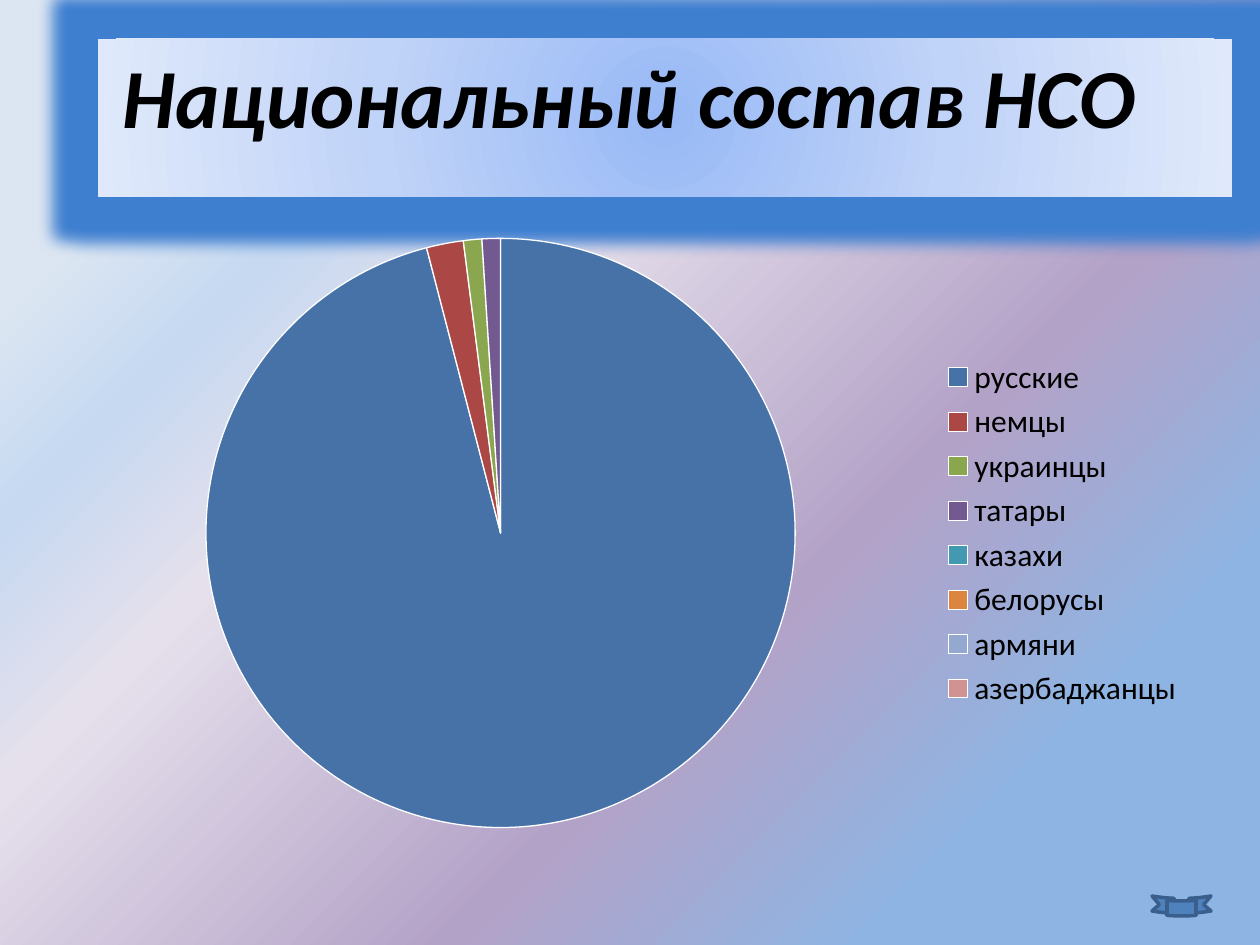
from lxml import etree
from pptx import Presentation
from pptx.chart.data import CategoryChartData
from pptx.dml.color import RGBColor
from pptx.enum.chart import XL_CHART_TYPE, XL_LEGEND_POSITION
from pptx.enum.shapes import MSO_SHAPE
from pptx.enum.text import MSO_ANCHOR, PP_ALIGN
from pptx.oxml import parse_xml
from pptx.oxml.ns import nsdecls, qn
from pptx.util import Pt

PIE = XL_CHART_TYPE.PIE
RIGHT = XL_LEGEND_POSITION.RIGHT
TOP = MSO_ANCHOR.TOP
CENTER = PP_ALIGN.CENTER

TITLE = "Национальный состав НСО"
FONT = "Calibri"
NATIONALITIES = [
    ("русские", 95, "4672A8"),
    ("немцы", 2, "AB4744"),
    ("украинцы", 1, "8AA64F"),
    ("татары", 1, "725990"),
    ("казахи", 0, "4299B0"),
    ("белорусы", 0, "DC853E"),
    ("армяни", 0, "93A9CF"),
    ("азербаджанцы", 0, "D19392"),
]
COLORS = {"text": "000000", "edge": "FFFFFF", "glow": "3F7FD0",
          "ribbon": "4F81BD", "ribbon_line": "3A5F8C"}
BACKGROUND_STOPS = [(14, "DCE6F2"), (24, "C6D9F1"), (36, "E6E0EC"),
                    (63, "B3A2C7"), (82, "8EB4E3"), (100, "8EB4E3")]
BANNER_STOPS = [(0, "98B9F6"), (50, "C0D3F8"), (100, "E0E9FB")]
DIAGONAL = '<a:lin ang="2700000" scaled="0"/>'
RADIAL = ('<a:path path="circle"><a:fillToRect l="50000" t="50000" '
          'r="50000" b="50000"/></a:path>')

BOXES = {
    "banner": (98, 39, 1134, 158),
    "title": (63, 38, 1134, 158),
    "chart": (63, 221, 1134, 624),
    "ribbon": (1152, 896, 59, 20),
}
PX = 914400 / 126


def box(part):
    return [round(length * PX) for length in BOXES[part]]


def rgb(name):
    return RGBColor.from_string(COLORS[name])


def gradient(stops, direction):
    marks = "".join(f'<a:gs pos="{pos * 1000}"><a:srgbClr val="{color}"/></a:gs>'
                    for pos, color in stops)
    return parse_xml(f'<a:gradFill {nsdecls("a")} rotWithShape="1">'
                     f'<a:gsLst>{marks}</a:gsLst>{direction}</a:gradFill>')


def set_gradient(parent, stops, direction):
    parent.replace(parent.find(qn("a:solidFill")), gradient(stops, direction))


def style_font(font, size):
    font.name = FONT
    font.size = Pt(size)
    font.color.rgb = rgb("text")


def add_background(slide):
    fill = slide.background.fill
    fill.solid()
    fill.fore_color.rgb = rgb("edge")
    set_gradient(slide._element.cSld.find(qn("p:bg")).find(qn("p:bgPr")),
                 BACKGROUND_STOPS, DIAGONAL)


def add_banner(slide):
    banner = slide.shapes.add_shape(MSO_SHAPE.RECTANGLE, *box("banner"))
    banner.shadow.inherit = False
    banner.line.fill.background()
    banner.fill.solid()
    properties = banner._element.spPr
    set_gradient(properties, BANNER_STOPS, RADIAL)
    glow = etree.SubElement(properties.find(qn("a:effectLst")), qn("a:glow"),
                            rad=str(Pt(18)))
    etree.SubElement(glow, qn("a:srgbClr"), val=COLORS["glow"])
    slide.shapes.title._element.addprevious(banner._element)


def add_title(slide):
    title = slide.shapes.title
    title.left, title.top, title.width, title.height = box("title")
    frame = title.text_frame
    frame.text = TITLE
    frame.vertical_anchor = TOP
    heading = frame.paragraphs[0]
    heading.alignment = CENTER
    style_font(heading.font, 48)
    heading.font.bold = heading.font.italic = True


def add_pie(slide):
    data = CategoryChartData()
    data.categories = [name for name, _, _ in NATIONALITIES]
    data.add_series("Series 1", [share for _, share, _ in NATIONALITIES])
    chart = slide.shapes.add_chart(PIE, *box("chart"), data).chart
    style_font(chart.font, 18)
    chart.has_title = False
    chart.has_legend = True
    chart.legend.position = RIGHT
    chart.legend.include_in_layout = False
    pie = chart.plots[0]
    pie.vary_by_categories = True
    for index, (_, _, color) in enumerate(NATIONALITIES):
        slice_format = pie.series[0].points[index].format
        slice_format.fill.solid()
        slice_format.fill.fore_color.rgb = RGBColor.from_string(color)
        slice_format.line.color.rgb = rgb("edge")
        slice_format.line.width = Pt(0.75)


def add_ribbon(slide):
    ribbon = slide.shapes.add_shape(MSO_SHAPE.CURVED_DOWN_RIBBON, *box("ribbon"))
    ribbon.shadow.inherit = False
    ribbon.fill.solid()
    ribbon.fill.fore_color.rgb = rgb("ribbon")
    ribbon.line.color.rgb = rgb("ribbon_line")
    ribbon.line.width = Pt(2)


def main():
    deck = Presentation()
    deck.slide_width, deck.slide_height = round(1260 * PX), round(945 * PX)
    slide = deck.slides.add_slide(deck.slide_layouts[5])
    add_background(slide)
    add_banner(slide)
    add_title(slide)
    add_pie(slide)
    add_ribbon(slide)
    deck.save("out.pptx")


if __name__ == "__main__":
    main()
